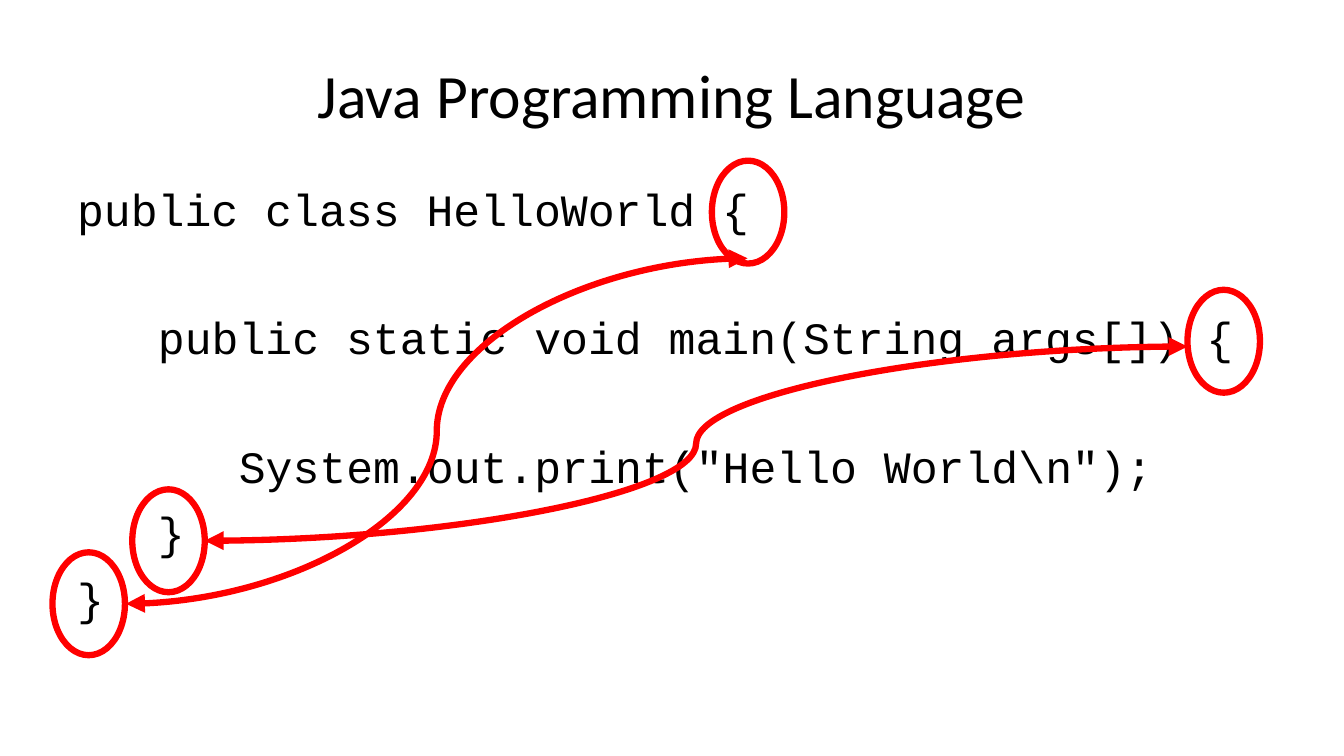
from lxml.etree import SubElement
from pptx import Presentation
from pptx.dml.color import RGBColor
from pptx.enum.shapes import MSO_CONNECTOR, MSO_SHAPE
from pptx.enum.text import MSO_ANCHOR, PP_ALIGN
from pptx.oxml.ns import qn
from pptx.util import Pt

PX = 9525  # EMU per px
RED, BLACK = "FF0000", "000000"
INDENT = 77  # three monospaced characters
BRACE_W, BRACE_H = 69, 98

# text, indent level, space before in points
CODE = [
    ("public class HelloWorld {", 0, 6.5),
    ("public static void main(String args[]) {", 1, 53.4),
    ('System.out.print("Hello World\\n");', 2, 53.4),
    ("}", 1, 8.7),
    ("}", 0, 8.7),
]
# left, top of each ring around a brace
RINGS = [(1131, 276), (126, 466), (678, 153), (50, 526)]
# from x, y to x, y
LINKS = [(712, 246, 120, 575), (1131, 330, 195, 515)]


def px(*lengths):
    return [n * PX for n in lengths]


def color(hex_code):
    return RGBColor.from_string(hex_code)


def set_font(p, name, size):
    p.font.name = name
    p.font.size = Pt(size)
    p.font.color.rgb = color(BLACK)


def set_line(sp):
    sp.line.color.rgb = color(RED)
    sp.line.width = Pt(4.5)


def add_title(s, box, text):
    title = s.shapes.title
    title.left, title.top, title.width, title.height = px(*box)
    tf = title.text_frame
    tf.text = text
    tf.vertical_anchor = MSO_ANCHOR.MIDDLE
    p = tf.paragraphs[0]
    p.alignment = PP_ALIGN.CENTER
    set_font(p, "Calibri", 44)


def add_code(s, box):
    tf = s.shapes.add_textbox(*px(*box)).text_frame
    tf.word_wrap = True
    for i, (text, level, before) in enumerate(CODE):
        p = tf.add_paragraph() if i else tf.paragraphs[0]
        p.text = text
        p.space_before = Pt(before)
        set_font(p, "Courier New", 32)
        pPr = p._p.get_or_add_pPr()
        pPr.set("marL", str(level * INDENT * PX))
        pPr.set("indent", "0")


def add_ring(s, left, top):
    sp = s.shapes.add_shape(MSO_SHAPE.OVAL, *px(left, top, BRACE_W, BRACE_H))
    sp.shadow.inherit = False
    sp.fill.background()
    set_line(sp)


def add_link(s, ends):
    cxn = s.shapes.add_connector(MSO_CONNECTOR.CURVE, *px(*ends))
    set_line(cxn)
    ln = cxn.line._get_or_add_ln()
    for tag in ("a:headEnd", "a:tailEnd"):
        SubElement(ln, qn(tag), type="triangle")
    SubElement(cxn._element.spPr, qn("a:effectLst"))


def main():
    prs = Presentation()
    prs.slide_width, prs.slide_height = px(1280, 720)
    s = prs.slides.add_slide(prs.slide_layouts[5])

    # Heading and program
    add_title(s, (64, 29, 1152, 120), "Java Programming Language")
    add_code(s, (64, 168, 1152, 475))

    # Matching braces
    for left, top in RINGS:
        add_ring(s, left, top)
    for ends in LINKS:
        add_link(s, ends)

    prs.save("out.pptx")


if __name__ == "__main__":
    main()
